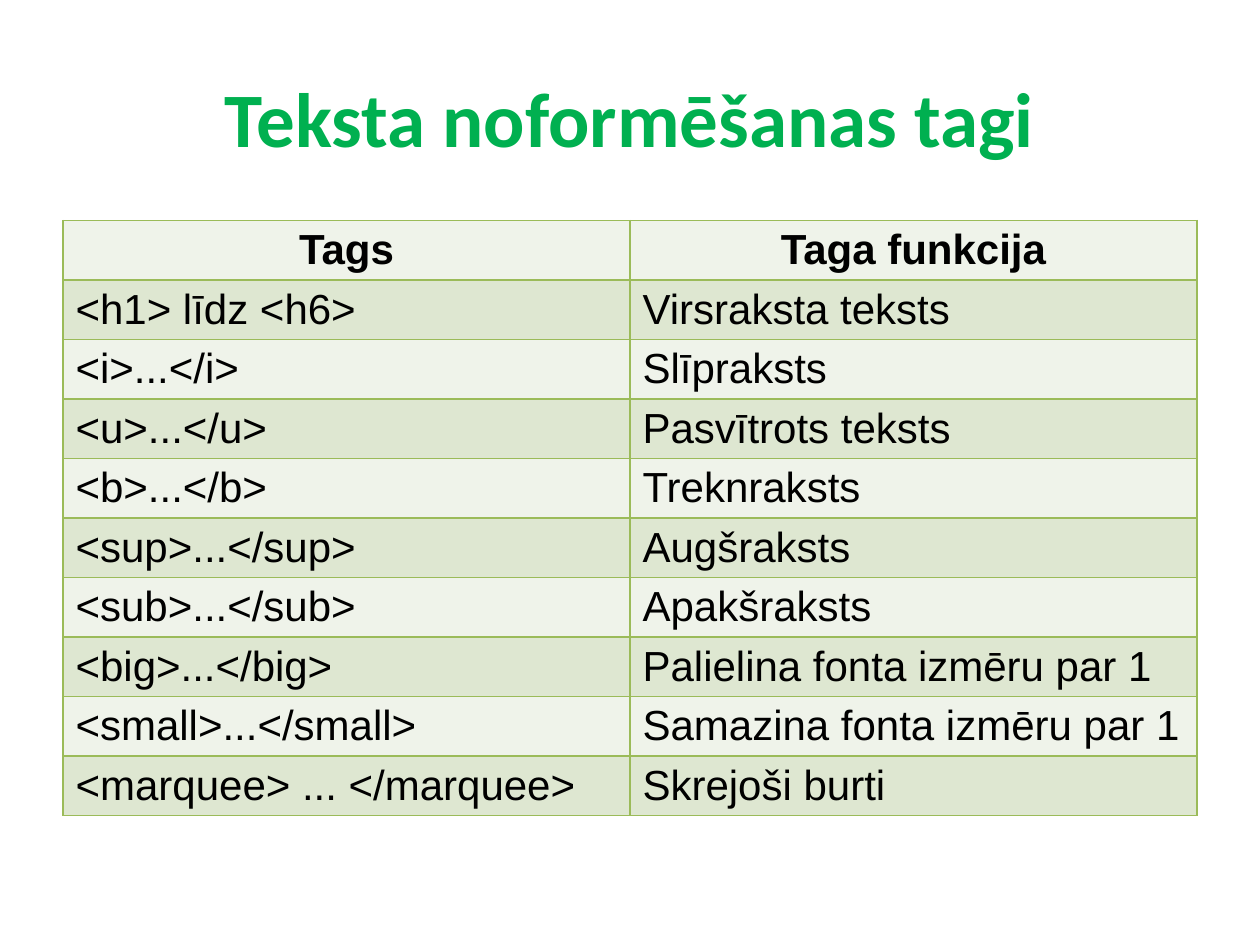
from lxml.etree import SubElement
from pptx import Presentation
from pptx.dml.color import RGBColor
from pptx.enum.text import MSO_ANCHOR, PP_ALIGN
from pptx.oxml.ns import qn
from pptx.util import Pt


def add_text(paragraph, text, font_name, size, color, bold):
    run = paragraph.add_run()
    run.text = text
    run.font.name = font_name
    run.font.size = Pt(size)
    run.font.bold = bold
    run.font.color.rgb = RGBColor.from_string(color)


def add_borders(cell, color, width):
    properties = cell._tc.get_or_add_tcPr()
    for position, side in enumerate(("a:lnL", "a:lnR", "a:lnT", "a:lnB")):
        line = SubElement(properties, qn(side), w=str(Pt(width)))
        fill = SubElement(line, qn("a:solidFill"))
        SubElement(fill, qn("a:srgbClr"), val=color)
        properties.insert(position, line)


TAGS = [
    ("Tags", "Taga funkcija"),
    ("<h1> līdz <h6>", "Virsraksta teksts"),
    ("<i>...</i>", "Slīpraksts"),
    ("<u>...</u>", "Pasvītrots teksts"),
    ("<b>...</b>", "Treknraksts"),
    ("<sup>...</sup>", "Augšraksts"),
    ("<sub>...</sub>", "Apakšraksts"),
    ("<big>...</big>", "Palielina fonta izmēru par 1"),
    ("<small>...</small>", "Samazina fonta izmēru par 1"),
    ("<marquee> ... </marquee>", "Skrejoši burti"),
]
BAND_FILLS = ("EFF3EA", "DEE7D1")

presentation = Presentation()
presentation.slide_width = Pt(720)
presentation.slide_height = Pt(540)
slide = presentation.slides.add_slide(presentation.slide_layouts[5])

title = slide.shapes.title
title.left, title.top, title.width, title.height = Pt(36), Pt(21.6), Pt(648), Pt(90)
title.text_frame.vertical_anchor = MSO_ANCHOR.MIDDLE
title_paragraph = title.text_frame.paragraphs[0]
title_paragraph.alignment = PP_ALIGN.CENTER
add_text(title_paragraph, "Teksta noformēšanas tagi", "Calibri", 44, "00B050", True)

table_frame = slide.shapes.add_table(len(TAGS), 2, Pt(36), Pt(126), Pt(648), Pt(360))
table = table_frame.table
for row_index, texts in enumerate(TAGS):
    table.rows[row_index].height = Pt(29.5)
    is_header = row_index == 0
    for column_index, text in enumerate(texts):
        cell = table.cell(row_index, column_index)
        cell.fill.solid()
        cell.fill.fore_color.rgb = RGBColor.from_string(BAND_FILLS[row_index % 2])
        add_borders(cell, "9BBB59", 1)
        paragraph = cell.text_frame.paragraphs[0]
        paragraph.alignment = PP_ALIGN.CENTER if is_header else PP_ALIGN.LEFT
        add_text(paragraph, text, "Arial", 24, "000000", is_header)
table_frame.height = Pt(360)

presentation.save("out.pptx")
